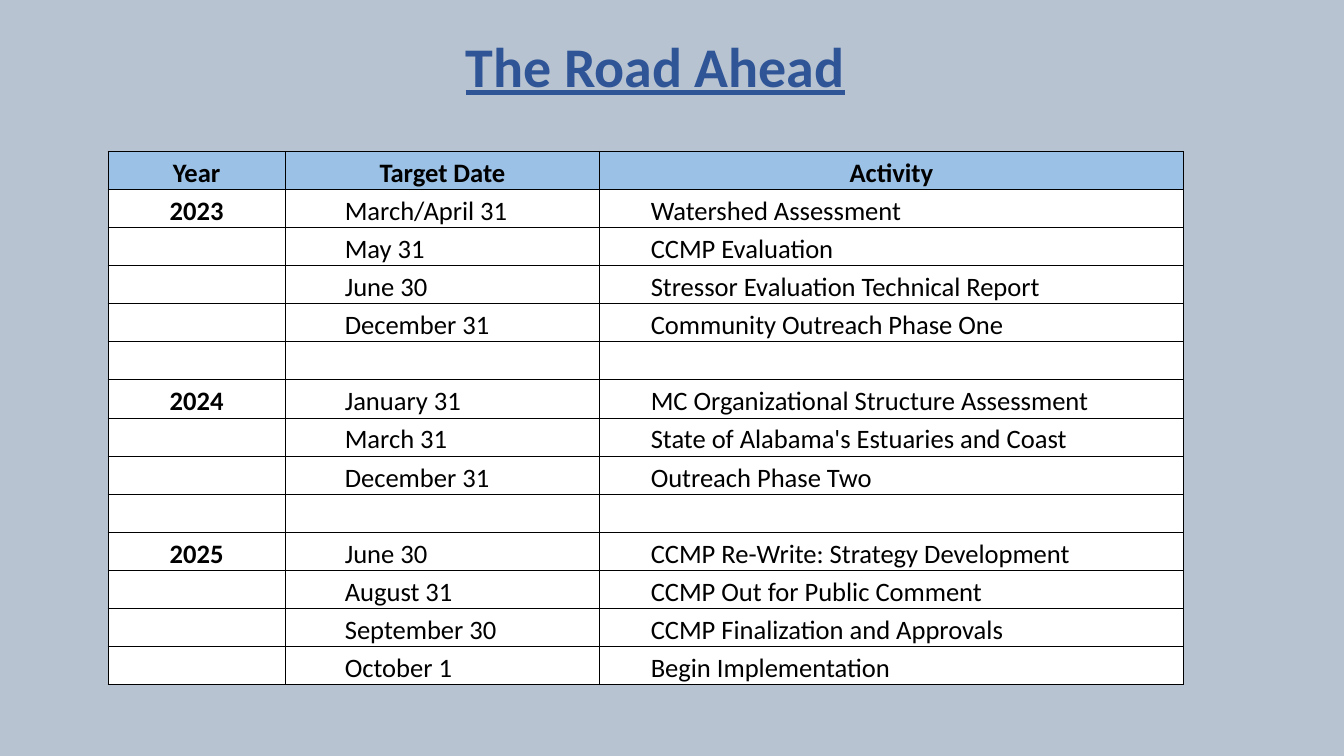
from dataclasses import dataclass

from lxml.etree import SubElement
from pptx import Presentation
from pptx.dml.color import RGBColor as RGB
from pptx.enum.text import MSO_ANCHOR as ANCHOR, MSO_AUTO_SIZE as AUTOSIZE, PP_ALIGN as ALIGN
from pptx.oxml.ns import qn
from pptx.util import Cm, Pt


@dataclass(frozen=True)
class Theme:
    font: str = "Calibri"
    background: RGB = RGB(0xB8, 0xC3, 0xD1)
    title: RGB = RGB(0x2F, 0x55, 0x97)
    header: RGB = RGB(0x9B, 0xC2, 0xE6)
    body: RGB = RGB(0xFF, 0xFF, 0xFF)
    text: RGB = RGB(0, 0, 0)
    title_size: Pt = Pt(40)
    table_size: Pt = Pt(19)
    border: Pt = Pt(0.5)


THEME = Theme()
TITLE_ONLY = 5
HEADINGS = ("Year", "Target Date", "Activity")
COLUMN_WIDTHS = (4.47, 7.92, 14.71)
INDENT = Cm(1.27)
MILESTONES = {
    "2023": (
        ("March/April 31", "Watershed Assessment"),
        ("May 31", "CCMP Evaluation"),
        ("June 30", "Stressor Evaluation Technical Report"),
        ("December 31", "Community Outreach Phase One"),
    ),
    "2024": (
        ("January 31", "MC Organizational Structure Assessment"),
        ("March 31", "State of Alabama's Estuaries and Coast"),
        ("December 31", "Outreach Phase Two"),
    ),
    "2025": (
        ("June 30", "CCMP Re-Write: Strategy Development"),
        ("August 31", "CCMP Out for Public Comment"),
        ("September 30", "CCMP Finalization and Approvals"),
        ("October 1", "Begin Implementation"),
    ),
}


def schedule_rows():
    rows = [HEADINGS]
    for year, milestones in MILESTONES.items():
        if len(rows) > 1:
            rows.append(("", "", ""))
        for i, (date, activity) in enumerate(milestones):
            rows.append((year if i == 0 else "", date, activity))
    return rows


def add_run(p, text, size, color, bold):
    r = p.add_run()
    r.text = text
    r.font.name = THEME.font
    r.font.size = size
    r.font.bold = bold
    r.font.color.rgb = color
    return r


def set_borders(cell):
    tc_pr = cell._tc.get_or_add_tcPr()
    for side in ("lnL", "lnR", "lnT", "lnB"):
        ln = SubElement(tc_pr, qn(f"a:{side}"), w=str(THEME.border))
        fill = SubElement(ln, qn("a:solidFill"))
        SubElement(fill, qn("a:srgbClr"), val=str(THEME.text))


def format_cell(cell, text, is_header, column):
    set_borders(cell)
    cell.fill.solid()
    cell.fill.fore_color.rgb = THEME.header if is_header else THEME.body
    cell.vertical_anchor = ANCHOR.BOTTOM
    indented = not is_header and column > 0
    cell.margin_left = Cm(0.23) if indented and column == 1 else Cm(0.02)
    cell.margin_right = cell.margin_top = Cm(0.02)
    cell.margin_bottom = 0
    if not text:
        return
    p = cell.text_frame.paragraphs[0]
    if indented:
        p.level = 1
        p_pr = p._p.get_or_add_pPr()
        p_pr.set("marL", str(INDENT))
        p_pr.set("indent", "0")
    else:
        p.alignment = ALIGN.CENTER
    add_run(p, text, THEME.table_size, THEME.text, not indented)


def add_title(slide, text, left, top, width, height):
    sp = slide.shapes.title
    sp.left, sp.top, sp.width, sp.height = left, top, width, height
    tf = sp.text_frame
    tf.word_wrap = False
    tf.auto_size = AUTOSIZE.SHAPE_TO_FIT_TEXT
    tf.vertical_anchor = ANCHOR.TOP
    p = tf.paragraphs[0]
    p.alignment = ALIGN.LEFT
    r = add_run(p, text, THEME.title_size, THEME.title, True)
    r.font.underline = True


def add_schedule(slide, left, top, width, height):
    rows = schedule_rows()
    frame = slide.shapes.add_table(len(rows), len(HEADINGS), left, top, width, height)
    table = frame.table
    table.first_row = table.horz_banding = False
    for column, share in zip(table.columns, COLUMN_WIDTHS):
        column.width = int(width * share / sum(COLUMN_WIDTHS))
    for i, values in enumerate(rows):
        table.rows[i].height = height // len(rows)
        for j, text in enumerate(values):
            format_cell(table.cell(i, j), text, i == 0, j)


def main():
    prs = Presentation()
    prs.slide_width, prs.slide_height = Cm(33.87), Cm(19.05)
    slide = prs.slides.add_slide(prs.slide_layouts[TITLE_ONLY])
    slide.background.fill.solid()
    slide.background.fill.fore_color.rgb = THEME.background
    add_title(slide, "The Road Ahead", Cm(11.48), Cm(0.66), Cm(10.16), Cm(1.96))
    add_schedule(slide, Cm(2.72), Cm(3.81), Cm(27.1), Cm(13.44))
    prs.save("out.pptx")


if __name__ == "__main__":
    main()
